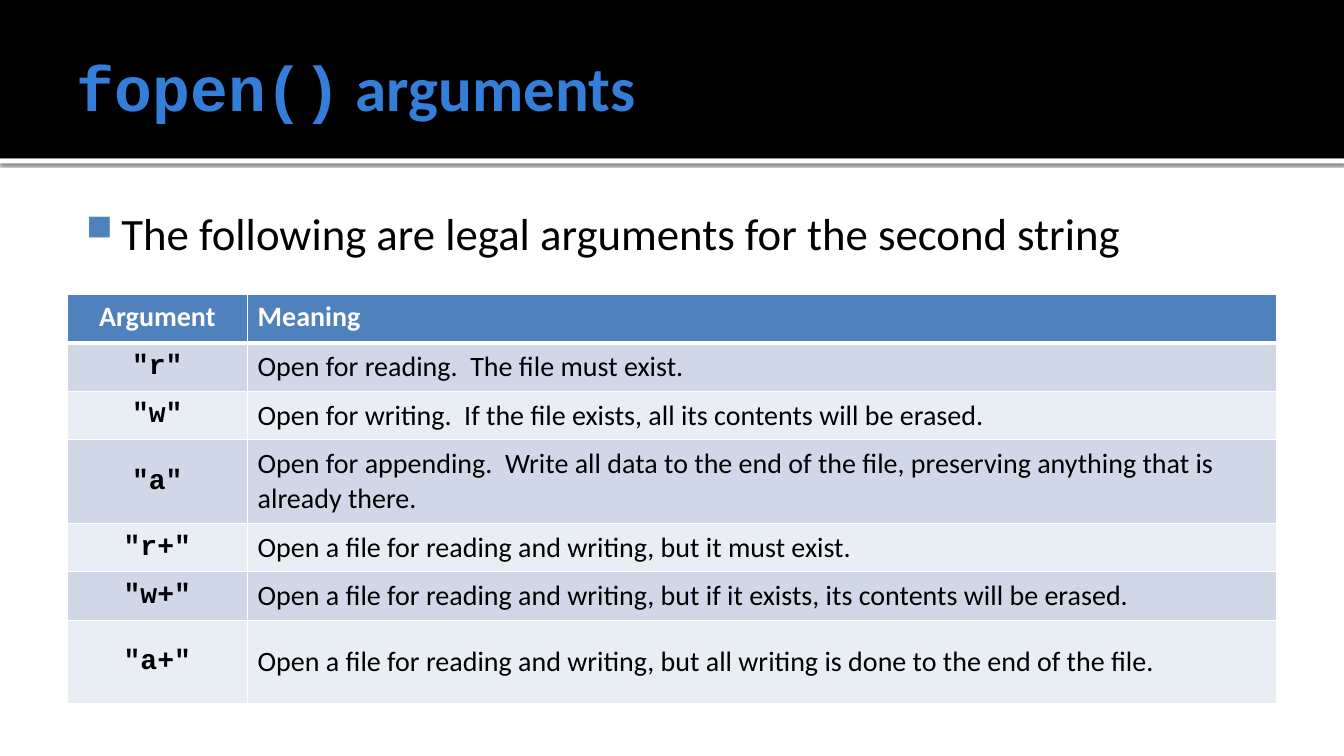
import lxml.etree
import pptx
import pptx.dml.color
import pptx.enum.shapes
import pptx.enum.text
import pptx.oxml
import pptx.oxml.ns
import pptx.util

Cm = pptx.util.Cm
Pt = pptx.util.Pt
ANCHOR = pptx.enum.text.MSO_ANCHOR
ALIGN = pptx.enum.text.PP_ALIGN

SLIDE_WIDTH = 33.87
BANNER_HEIGHT = 3.99
MARGIN = 1.69
CONTENT_WIDTH = 30.48
BODY_FONT = "Calibri"
CODE_FONT = "Courier New"
BLACK, WHITE, BLUE, TITLE_BLUE = "000000", "FFFFFF", "4F81BD", "337ED9"
BANDS = ("D0D8E8", "E9EDF4")

MODES = [
    ('"r"', "Open for reading.  The file must exist."),
    ('"w"', "Open for writing.  If the file exists, all its contents will be erased."),
    ('"a"', "Open for appending.  Write all data to the end of the file, "
            "preserving anything that is already there."),
    ('"r+"', "Open a file for reading and writing, but it must exist."),
    ('"w+"', "Open a file for reading and writing, but if it exists, its contents will be erased."),
    ('"a+"', "Open a file for reading and writing, but all writing is done to the end of the file."),
]


def color(value):
    return pptx.dml.color.RGBColor.from_string(value)


def apply(target, values):
    for key, value in values.items():
        setattr(target, key, value)


def add_xml(parent, markup):
    namespace = pptx.oxml.ns.nsdecls("a")
    tag, rest = markup[1:].split(" ", 1)
    parent.append(pptx.oxml.parse_xml(f"<{tag} {namespace} {rest}"))


def add_run(paragraph, text, font, size, hue, bold=False):
    run = paragraph.add_run()
    run.text = text
    apply(run.font, {"name": font, "size": Pt(size), "bold": bold})
    run.font.color.rgb = color(hue)


def add_bar(slide, top, height, hue):
    bar = slide.shapes.add_shape(
        pptx.enum.shapes.MSO_SHAPE.RECTANGLE, 0, Cm(top), Cm(SLIDE_WIDTH), Cm(height))
    bar.shadow.inherit = False
    bar.fill.solid()
    bar.fill.fore_color.rgb = color(hue)
    bar.line.fill.background()
    return bar


def cast_shadow(bar):
    effects = bar.element.spPr.find(pptx.oxml.ns.qn("a:effectLst"))
    add_xml(effects, '<a:outerShdw blurRad="31750" dist="10160" dir="5400000">'
                     f'<a:srgbClr val="{BLACK}"><a:alpha val="60000"/></a:srgbClr></a:outerShdw>')


def add_text(slide, top, height, frame_format):
    box = slide.shapes.add_textbox(Cm(MARGIN), Cm(top), Cm(CONTENT_WIDTH), Cm(height))
    apply(box.text_frame, {"word_wrap": True, **frame_format})
    return box.text_frame.paragraphs[0]


def add_bullet(paragraph):
    properties = paragraph._p.get_or_add_pPr()
    apply_indent = {"marL": Cm(1.22), "indent": Cm(-0.89)}
    for key, value in apply_indent.items():
        properties.set(key, str(int(value)))
    add_xml(properties, f'<a:buClr ><a:srgbClr val="{BLUE}"/></a:buClr>')
    add_xml(properties, '<a:buSzPct val="80000"/>')
    add_xml(properties, '<a:buChar char="■"/>')


def style_cell(cell, fill, top_width, bottom_width):
    properties = cell._tc.get_or_add_tcPr()
    for side, width in (("L", 1), ("R", 1), ("T", top_width), ("B", bottom_width)):
        add_xml(properties, f'<a:ln{side} w="{Pt(width)}"><a:solidFill>'
                            f'<a:srgbClr val="{WHITE}"/></a:solidFill></a:ln{side}>')
    cell.fill.solid()
    cell.fill.fore_color.rgb = color(fill)


def add_mode_table(slide):
    rows = [("Argument", "Meaning")] + MODES
    heights = (1.22, 1.22, 1.22, 2.11, 1.22, 1.22, 2.11)
    table = slide.shapes.add_table(
        len(rows), 2, Cm(MARGIN), Cm(7.42), Cm(CONTENT_WIDTH), Cm(sum(heights))).table
    for column, width in zip(table.columns, (4.55, 25.93)):
        column.width = Cm(width)
    for index, (row, height, texts) in enumerate(zip(table.rows, heights, rows)):
        row.height = Cm(height)
        header = index == 0
        for position, (cell, text) in enumerate(zip(row.cells, texts)):
            argument = position == 0
            cell.vertical_anchor = ANCHOR.TOP if header else ANCHOR.MIDDLE
            style_cell(cell, BLUE if header else BANDS[(index - 1) % 2],
                       3 if index == 1 else 1, 3 if header else 1)
            paragraph = cell.text_frame.paragraphs[0]
            paragraph.alignment = ALIGN.CENTER if argument else ALIGN.LEFT
            add_run(paragraph, text, CODE_FONT if argument and not header else BODY_FONT,
                    20, WHITE if header else BLACK, header or argument)


def main():
    deck = pptx.Presentation()
    apply(deck, {"slide_width": Cm(SLIDE_WIDTH), "slide_height": Cm(19.05)})
    slide = deck.slides.add_slide(deck.slide_layouts[6])

    cast_shadow(add_bar(slide, BANNER_HEIGHT, 0.13, WHITE))
    add_bar(slide, 0, BANNER_HEIGHT, BLACK)

    title = add_text(slide, 0.43, 3.48, {
        "vertical_anchor": ANCHOR.MIDDLE, "margin_left": Cm(0.25), "margin_right": Cm(0.13),
        "margin_top": Cm(0.13), "margin_bottom": Cm(0.13)})
    add_run(title, "fopen()", CODE_FONT, 45, TITLE_BLUE, True)
    add_run(title, " arguments", BODY_FONT, 45, TITLE_BLUE, True)

    introduction = add_text(slide, 4.93, 7.57, {
        "vertical_anchor": ANCHOR.TOP, "margin_left": Cm(0.15), "margin_right": Cm(0.25),
        "margin_top": Cm(0.25), "margin_bottom": Cm(0.13)})
    add_bullet(introduction)
    add_run(introduction, "The following are legal arguments for the second string",
            BODY_FONT, 32, BLACK)

    add_mode_table(slide)
    deck.save("out.pptx")


if __name__ == "__main__":
    main()
